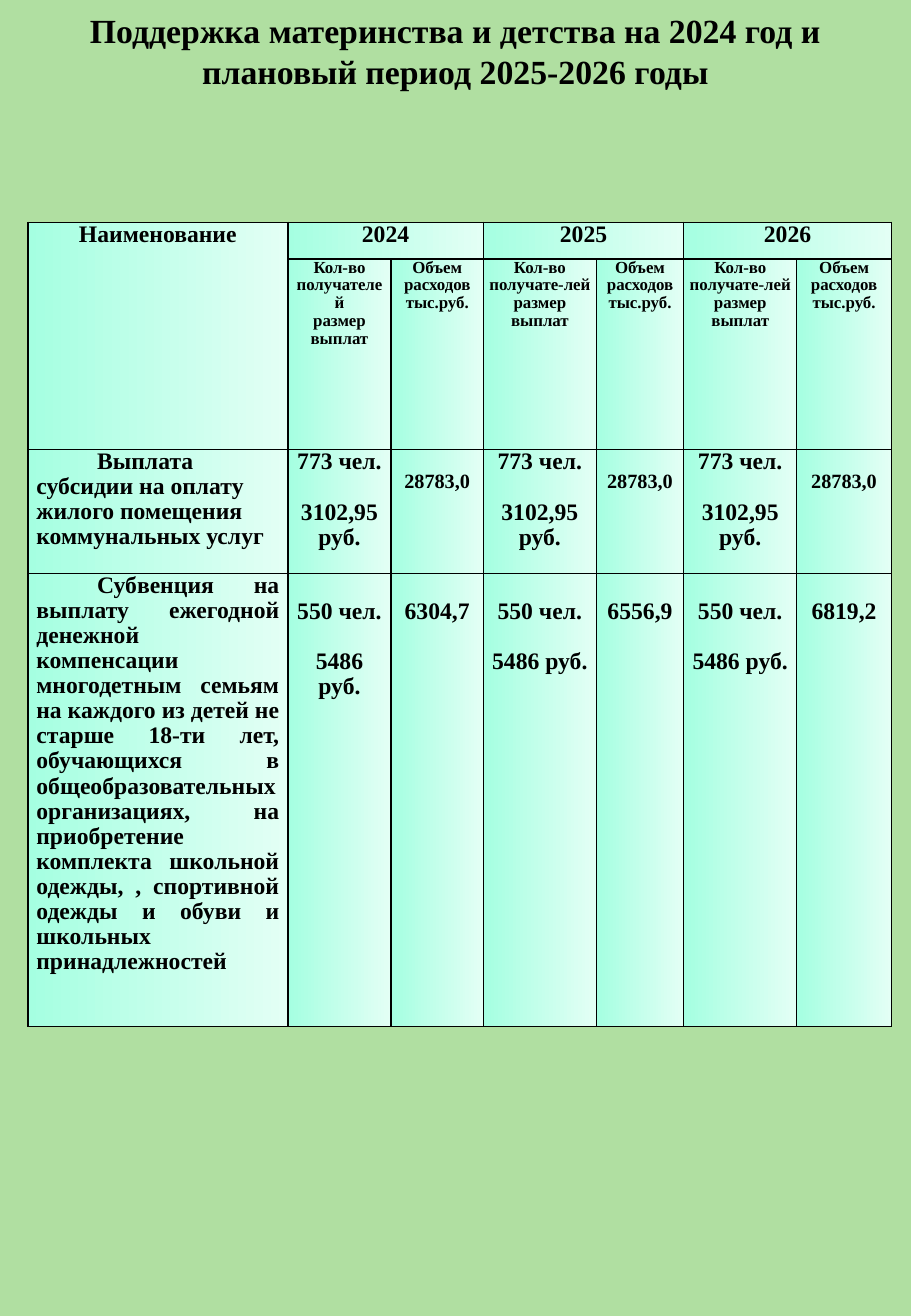
from lxml import etree
from pptx import Presentation
from pptx.dml.color import RGBColor
from pptx.enum.text import MSO_ANCHOR, MSO_AUTO_SIZE, PP_ALIGN
from pptx.oxml.ns import qn
from pptx.util import Inches, Pt

CENTER, LEFT, JUSTIFY = PP_ALIGN.CENTER, PP_ALIGN.LEFT, PP_ALIGN.JUSTIFY
THEME = {
    "font": "Times New Roman", "text": "000000", "panel": "B0DFA1", "glow": "35989E",
    "cell": ("A5FFE1", "E3FFF5"), "background": ("6C6C6C", "828282"),
    "title": 20, "body": 14, "amount": 12, "header": 10,
}
TITLE = "Поддержка материнства и детства на 2024 год и плановый период 2025-2026 годы"
SUBSIDY = "Выплата субсидии на оплату жилого помещения коммунальных услуг"
SUBVENTION = (
    "Субвенция на выплату ежегодной денежной компенсации многодетным семьям "
    "на каждого из детей не старше 18-ти лет, обучающихся в общеобразовательных "
    "организациях, на приобретение комплекта школьной одежды, , спортивной одежды "
    "и обуви и школьных принадлежностей"
)
YEARS = {  # year: (word for recipients, amount of the subsidy, amount of the subvention)
    "2024": ("получателей", "28783,0", "6304,7"),
    "2025": ("получате-лей", "28783,0", "6556,9"),
    "2026": ("получате-лей", "28783,0", "6819,2"),
}
COLUMNS = (2.14, 0.85, 0.76, 0.93, 0.72, 0.93, 0.78)
ROWS = (0.3, 1.57, 1.02, 3.73)
LINE_GAP = 0.21
EFFECTS = f"""<a:effectLst xmlns:a="http://schemas.openxmlformats.org/drawingml/2006/main">
<a:glow rad="{Inches(0.25)}"><a:srgbClr val="{THEME['glow']}"><a:alpha val="90000"/></a:srgbClr></a:glow>
<a:outerShdw blurRad="{Pt(3.5)}" dist="{Pt(2.2)}" dir="5400000" rotWithShape="0">
<a:srgbClr val="000000"><a:alpha val="32000"/></a:srgbClr></a:outerShdw></a:effectLst>"""


def write_lines(text_frame, lines, size, **paragraph_format):
    text_frame.word_wrap = True
    for index, line in enumerate(lines):
        paragraph = text_frame.paragraphs[0] if index == 0 else text_frame.add_paragraph()
        run = paragraph.add_run()
        run.text = line
        for name, value in {"name": THEME["font"], "size": Pt(size), "bold": True}.items():
            setattr(run.font, name, value)
        run.font.color.rgb = RGBColor.from_string(THEME["text"])
        for name, value in paragraph_format.items():
            setattr(paragraph, name, value)


def fill_gradient(fill, colors, angle):
    fill.gradient()
    fill.gradient_angle = angle
    for stop, color in zip(fill.gradient_stops, colors):
        stop.color.rgb = RGBColor.from_string(color)


presentation = Presentation()
presentation.slide_width, presentation.slide_height = Inches(7.5), Inches(10.83)
slide = presentation.slides.add_slide(presentation.slide_layouts[5])
fill_gradient(slide.background.fill, THEME["background"], 270)

# Title placeholder shaped as the rounded panel
title = slide.shapes.title
panel_format = {"left": 0, "top": 0, "width": presentation.slide_width,
                "height": presentation.slide_height}
for name, value in panel_format.items():
    setattr(title, name, value)
properties = title._element.spPr
geometry = etree.SubElement(properties, qn("a:prstGeom"), prst="roundRect")
etree.SubElement(geometry, qn("a:avLst"))
title.fill.solid()
title.fill.fore_color.rgb = RGBColor.from_string(THEME["panel"])
title.line.fill.background()
properties.append(etree.fromstring(EFFECTS))
frame_format = {"vertical_anchor": MSO_ANCHOR.TOP, "auto_size": MSO_AUTO_SIZE.NONE,
                "margin_top": Inches(0.08)}
for name, value in frame_format.items():
    setattr(title.text_frame, name, value)
write_lines(title.text_frame, [TITLE], THEME["title"], alignment=CENTER)

# Table grid
table = slide.shapes.add_table(
    len(ROWS), len(COLUMNS), Inches(0.23), Inches(1.83),
    Inches(sum(COLUMNS)), Inches(sum(ROWS))).table
table.first_row = table.horz_banding = False
for column, width in zip(table.columns, COLUMNS):
    column.width = Inches(width)
for row, height in zip(table.rows, ROWS):
    row.height = Inches(height)
for row_index, row in enumerate(table.rows):
    for cell in row.cells:
        side = Inches(0.04 if row_index < 2 else 0.07)
        margins = {"margin_left": side, "margin_right": side, "margin_top": 0, "margin_bottom": 0}
        for name, value in margins.items():
            setattr(cell, name, value)
        fill_gradient(cell.fill, THEME["cell"], 0)
        cell_properties = cell._tc.get_or_add_tcPr()
        for position, edge in enumerate(("a:lnL", "a:lnR", "a:lnT", "a:lnB")):
            border = etree.Element(qn(edge), w=str(Pt(1)))
            border_fill = etree.SubElement(border, qn("a:solidFill"))
            etree.SubElement(border_fill, qn("a:srgbClr"), val=THEME["text"])
            cell_properties.insert(position, border)

# Table text: (row, column, lines, size, alignment, lines of space above)
body, amount, header = THEME["body"], THEME["amount"], THEME["header"]
entries = [
    (0, 0, ["Наименование"], body, CENTER, 0),
    (2, 0, [SUBSIDY], body, LEFT, 0),
    (3, 0, [SUBVENTION], body, JUSTIFY, 0),
]
table.cell(0, 0).merge(table.cell(1, 0))
for index, (year, (recipients, subsidy, subvention)) in enumerate(YEARS.items()):
    first = 1 + 2 * index
    table.cell(0, first).merge(table.cell(0, first + 1))
    entries += [
        (0, first, [year], body, CENTER, 0),
        (1, first, ["Кол-во", recipients, "размер", "выплат"], header, CENTER, 0),
        (1, first + 1, ["Объем", "расходов", "тыс.руб."], header, CENTER, 0),
        (2, first, ["773 чел.", "3102,95 руб."], body, CENTER, 0),
        (2, first + 1, [subsidy], amount, CENTER, amount / body),
        (3, first, ["550 чел.", "5486 руб."], body, CENTER, 1),
        (3, first + 1, [subvention], body, CENTER, 1),
    ]
for row, column, lines, size, alignment, space_above in entries:
    cell = table.cell(row, column)
    cell.margin_top = Inches(LINE_GAP * space_above)
    write_lines(cell.text_frame, lines, size, alignment=alignment, line_spacing=0.96)
    if row >= 2 and column == 0:
        cell.text_frame.paragraphs[0]._p.get_or_add_pPr().set("indent", str(Inches(0.5)))
    for paragraph in cell.text_frame.paragraphs[1:]:
        paragraph.space_before = Inches(LINE_GAP if row >= 2 else 0)

presentation.save("out.pptx")
